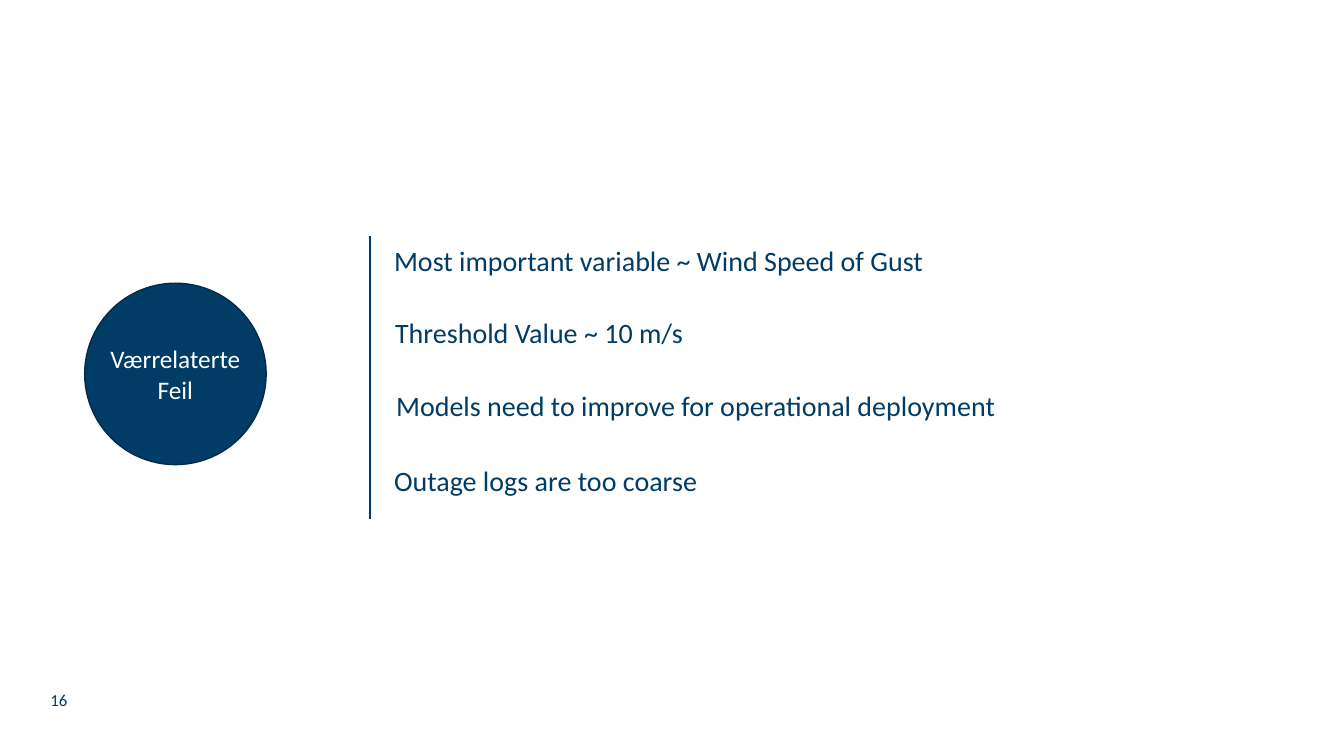
"""Build the slide of findings on weather-related faults."""
from dataclasses import dataclass

from lxml import etree
from pptx import Presentation
from pptx.dml.color import RGBColor
from pptx.enum.shapes import MSO_CONNECTOR, MSO_SHAPE
from pptx.enum.text import MSO_ANCHOR, MSO_AUTO_SIZE, PP_ALIGN
from pptx.oxml.ns import qn
from pptx.slide import Slide
from pptx.text.text import TextFrame
from pptx.util import Emu, Pt

ELLIPSE = MSO_SHAPE.OVAL
STRAIGHT = MSO_CONNECTOR.STRAIGHT
MIDDLE = MSO_ANCHOR.MIDDLE
LEFT, CENTER = PP_ALIGN.LEFT, PP_ALIGN.CENTER
FIT_TEXT = MSO_AUTO_SIZE.SHAPE_TO_FIT_TEXT

EMU_PER_PX = 9144
BLANK_LAYOUT = 6
FONT = "Calibri"
COLORS = {"navy": "003C65", "outline": "002C4B", "white": "FFFFFF"}
FINDING_HEIGHT = 44


@dataclass(frozen=True)
class Finding:
    text: str
    left: int
    top: int
    width: int


FINDINGS = [
    Finding("Most important variable ~ Wind Speed of Gust", 381, 237, 563),
    Finding("Threshold Value ~ 10 m/s", 382, 308, 319),
    Finding("Models need to improve for operational deployment", 383, 381, 620),
    Finding("Outage logs are too coarse", 381, 455, 324),
]


def px(length: int) -> Emu:
    return Emu(length * EMU_PER_PX)


def color(name: str) -> RGBColor:
    return RGBColor.from_string(COLORS[name])


def write(frame: TextFrame, text: str, size: int, color_name: str, alignment: PP_ALIGN = LEFT) -> None:
    frame.text = text
    for paragraph in frame.paragraphs:
        paragraph.alignment = alignment
        for run in paragraph.runs:
            run.font.name = FONT
            run.font.size = Pt(size)
            run.font.color.rgb = color(color_name)


def add_page_number(slide: Slide) -> None:
    frame = slide.shapes.add_textbox(px(50), px(684), px(34), px(20)).text_frame
    frame.margin_left = frame.margin_right = frame.margin_top = frame.margin_bottom = 0
    frame.vertical_anchor = MIDDLE
    frame.word_wrap = True
    write(frame, "16", 12, "navy")


def add_topic_circle(slide: Slide) -> None:
    circle = slide.shapes.add_shape(ELLIPSE, px(84), px(281), px(180), px(180))
    circle.shadow.inherit = False
    circle.fill.solid()
    circle.fill.fore_color.rgb = color("navy")
    circle.line.color.rgb = color("outline")
    circle.line.width = Pt(1)
    circle.text_frame.word_wrap = False
    circle.text_frame.vertical_anchor = MIDDLE
    write(circle.text_frame, "Værrelaterte\nFeil", 18, "white", CENTER)


def add_finding(slide: Slide, finding: Finding) -> None:
    box = slide.shapes.add_textbox(
        px(finding.left), px(finding.top), px(finding.width), px(FINDING_HEIGHT)
    )
    box.text_frame.word_wrap = False
    box.text_frame.auto_size = FIT_TEXT
    write(box.text_frame, finding.text, 20, "navy")


def add_divider(slide: Slide) -> None:
    divider = slide.shapes.add_connector(STRAIGHT, px(367), px(234), px(367), px(515))
    divider.line.color.rgb = color("navy")
    divider.line.width = Pt(2)
    etree.SubElement(divider._element.spPr, qn("a:effectLst"))


def main() -> None:
    presentation = Presentation()
    presentation.slide_width = px(1333)
    presentation.slide_height = px(750)
    slide = presentation.slides.add_slide(presentation.slide_layouts[BLANK_LAYOUT])
    add_page_number(slide)
    add_topic_circle(slide)
    for finding in FINDINGS:
        add_finding(slide, finding)
    add_divider(slide)
    presentation.save("out.pptx")


if __name__ == "__main__":
    main()
